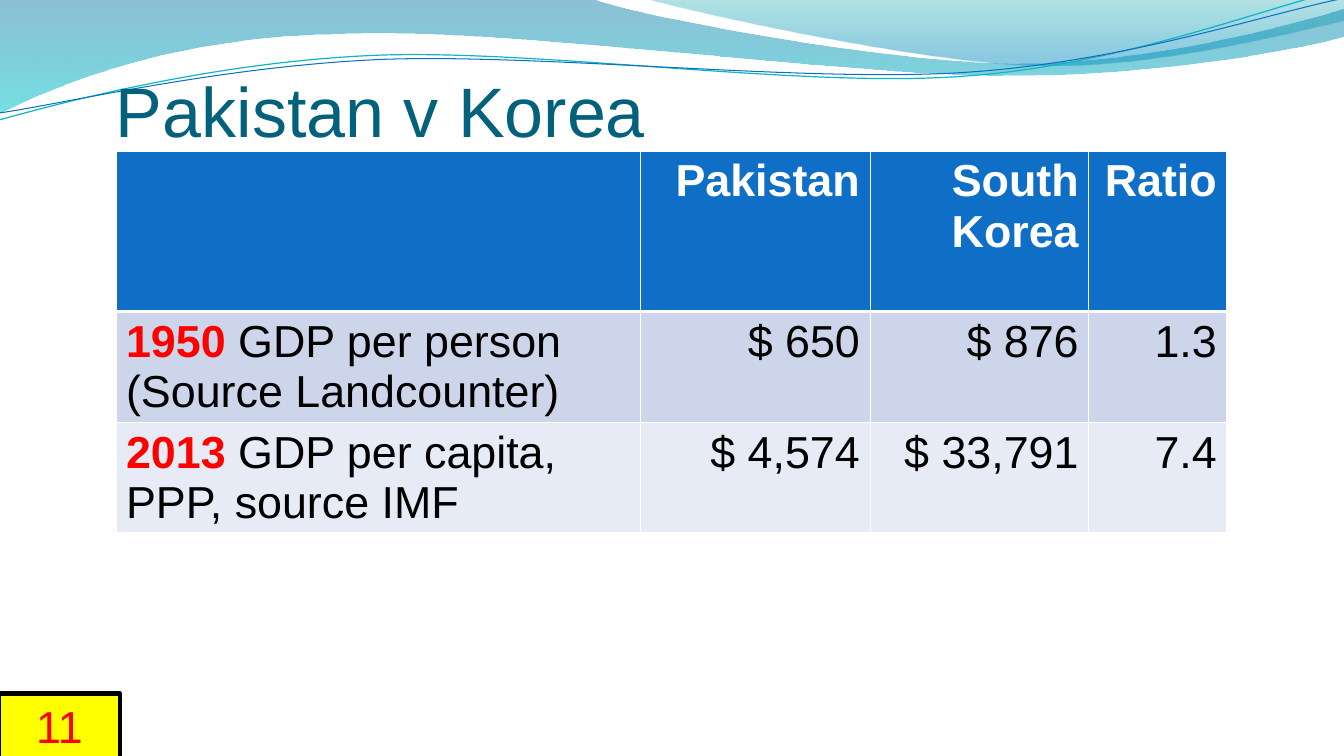
import pptx
import pptx.dml.color
import pptx.enum.shapes
import pptx.enum.text
import pptx.oxml
import pptx.oxml.ns
import pptx.util
from pptx.util import Inches

RGBColor = pptx.dml.color.RGBColor
TEAL = RGBColor(0x04, 0x61, 0x7B)
BLUE = RGBColor(0x0F, 0x6F, 0xC6)
AQUA = RGBColor(0x0A, 0xB8, 0xBF)
PALE = RGBColor(0xCC, 0xD5, 0xEA)
MIST = RGBColor(0xE7, 0xEB, 0xF5)
RED = RGBColor(0xFF, 0, 0)
YELLOW = RGBColor(0xFF, 0xFF, 0)
WHITE = RGBColor(0xFF, 0xFF, 0xFF)
BLACK = RGBColor(0, 0, 0)

ALIGN = pptx.enum.text.PP_ALIGN
NS = pptx.oxml.ns.nsdecls("a")
FONT = "Arial"

# A pair is a straight step; six numbers are a Bezier curve.
# Each band: outline, then (position, colour, percent opacity) stops.
BANDS = [
    ([(0, 0), (5.87, -0.01),
      (6.34, 0.17, 8.85, 0.63, 10.11, 0.63),
      (11.38, 0.63, 12.78, 0.26, 13.33, 0.09), (13.35, 0.36),
      (13.11, 0.44, 11.6, 0.76, 9.94, 0.75),
      (8.29, 0.75, 5.09, 0.28, 3.43, 0.34),
      (1.72, 0.36, 0.61, 0.83, -0.01, 1.13)],
     [(0, RGBColor(0, 0x74, 0xA1), 45), (1, RGBColor(0, 0xC6, 0xCF), 55)]),
    ([(6.39, -0.01),
      (6.79, 0.11, 9.09, 0.62, 10.25, 0.65),
      (11.41, 0.69, 12.82, 0.32, 13.33, 0.21), (13.33, 0)],
     [(0, RGBColor(0, 0xA1, 0xA9), 30), (0.8, RGBColor(0, 0x8B, 0xBF), 45)]),
]
CURVES = [
    ([(-0.01, 1.19),
      (0.64, 1.01, 2.11, 0.62, 3.69, 0.55),
      (5.27, 0.48, 7.9, 0.87, 9.5, 0.76),
      (11.1, 0.66, 12.52, 0.08, 13.31, -0.1)], AQUA, 0.85),
    ([(0, 1.12),
      (0.63, 1.03, 2.18, 0.66, 3.78, 0.59),
      (5.37, 0.53, 7.96, 0.82, 9.55, 0.72),
      (11.15, 0.62, 12.55, 0.14, 13.34, -0.02)], BLUE, 0.75),
]

COLS = [5.2, 2.28, 2.17, 1.37]
ROWS = [1.59, 1.1, 1.09]
FILLS = [BLUE, PALE, MIST]
DATA = [
    ["", "Pakistan", "South Korea", "Ratio"],
    [("1950", " GDP per person (Source Landcounter)"),
     "$ 650", "$ 876", "1.3"],
    [("2013", " GDP per capita, PPP, source IMF"),
     "$ 4,574", "$ 33,791", "7.4"],
]


def bend(shape, steps):
    """Merge each three line steps of a curve into one Bezier step."""
    lines = iter(list(shape.element.iter(pptx.oxml.ns.qn("a:lnTo"))))
    for step in steps[1:]:
        first = next(lines)
        if len(step) == 2:
            continue
        curve = pptx.oxml.parse_xml(f"<a:cubicBezTo {NS}/>")
        first.addprevious(curve)
        for line in (first, next(lines), next(lines)):
            curve.append(line[0])
            line.getparent().remove(line)


def outline(slide, steps, close):
    points = [(Inches(step[i]), Inches(step[i + 1]))
              for step in steps for i in range(0, len(step), 2)]
    pen = slide.shapes.build_freeform(*points[0], scale=1.0)
    pen.add_line_segments(points[1:], close=close)
    shape = pen.convert_to_shape()
    bend(shape, steps)
    shape.shadow.inherit = False
    return shape


def add_band(slide, steps, stops):
    shape = outline(slide, steps, True)
    shape.line.fill.background()
    shape.fill.gradient()
    shape.fill.gradient_angle = 270
    for stop, (place, color, alpha) in zip(shape.fill.gradient_stops, stops):
        stop.position = place
        stop.color.rgb = color
    colors = shape.element.spPr.iter(pptx.oxml.ns.qn("a:srgbClr"))
    for node, (place, color, alpha) in zip(colors, stops):
        node.append(pptx.oxml.parse_xml(
            f'<a:alpha {NS} val="{alpha * 1000}"/>'))


def add_curve(slide, steps, color, width):
    shape = outline(slide, steps, False)
    shape.fill.background()
    shape.line.color.rgb = color
    shape.line.width = pptx.util.Pt(width)


def style(run, size, color, bold=False):
    run.font.name = FONT
    run.font.size = pptx.util.Pt(size)
    run.font.color.rgb = color
    run.font.bold = bold


def set_title(slide, text):
    title = slide.shapes.title
    title.left, title.top = Inches(1.15), Inches(0.25)
    title.width, title.height = Inches(12.11), Inches(1.25)
    frame = title.text_frame
    frame.text = text
    frame.auto_size = pptx.enum.text.MSO_AUTO_SIZE.NONE
    frame.vertical_anchor = pptx.enum.text.MSO_ANCHOR.BOTTOM
    frame.margin_left = frame.margin_right = frame.margin_bottom = 0
    frame.margin_top = Inches(0.05)
    line = frame.paragraphs[0]
    line.alignment = ALIGN.LEFT
    style(line.runs[0], 50, TEAL)
    # Bring the title in front of the waves.
    title.element.getparent().append(title.element)


def add_edges(cell, head):
    props = cell._tc.get_or_add_tcPr()
    for side in "LRTB":
        width = pptx.util.Pt(3 if head and side == "B" else 1)
        props.append(pptx.oxml.parse_xml(
            f'<a:ln{side} {NS} w="{width}">'
            f'<a:solidFill><a:srgbClr val="{WHITE}"/></a:solidFill>'
            f'</a:ln{side}>'))


def fill_cell(cell, value, head, color):
    add_edges(cell, head)
    cell.fill.solid()
    cell.fill.fore_color.rgb = color
    line = cell.text_frame.paragraphs[0]
    if isinstance(value, tuple):
        for text, ink, bold in zip(value, (RED, BLACK), (True, False)):
            run = line.add_run()
            run.text = text
            style(run, 32, ink, bold)
    elif value:
        line.text = value
        line.alignment = ALIGN.RIGHT
        style(line.runs[0], 32, WHITE if head else BLACK, head)


def add_grid(slide):
    table = slide.shapes.add_table(
        len(ROWS), len(COLS), Inches(1.15), Inches(1.5),
        Inches(sum(COLS)), Inches(sum(ROWS))).table
    for col, width in zip(table.columns, COLS):
        col.width = Inches(width)
    for r, values in enumerate(DATA):
        table.rows[r].height = Inches(ROWS[r])
        for c, value in enumerate(values):
            fill_cell(table.cell(r, c), value, r == 0, FILLS[r])


def add_number(slide, text):
    box = slide.shapes.add_shape(
        pptx.enum.shapes.MSO_SHAPE.RECTANGLE,
        Inches(-0.01), Inches(6.88), Inches(1.2), Inches(0.64))
    box.shadow.inherit = False
    box.fill.solid()
    box.fill.fore_color.rgb = YELLOW
    box.line.color.rgb = BLACK
    box.line.width = pptx.util.Pt(3)
    box.text_frame.text = text
    line = box.text_frame.paragraphs[0]
    line.alignment = ALIGN.CENTER
    style(line.runs[0], 32, RED)


def main():
    deck = pptx.Presentation()
    deck.slide_width, deck.slide_height = Inches(13.33), Inches(7.5)
    slide = deck.slides.add_slide(deck.slide_layouts[5])
    for band in BANDS:
        add_band(slide, *band)
    for curve in CURVES:
        add_curve(slide, *curve)
    set_title(slide, "Pakistan v Korea")
    add_grid(slide)
    add_number(slide, "11")
    deck.save("out.pptx")


if __name__ == "__main__":
    main()
